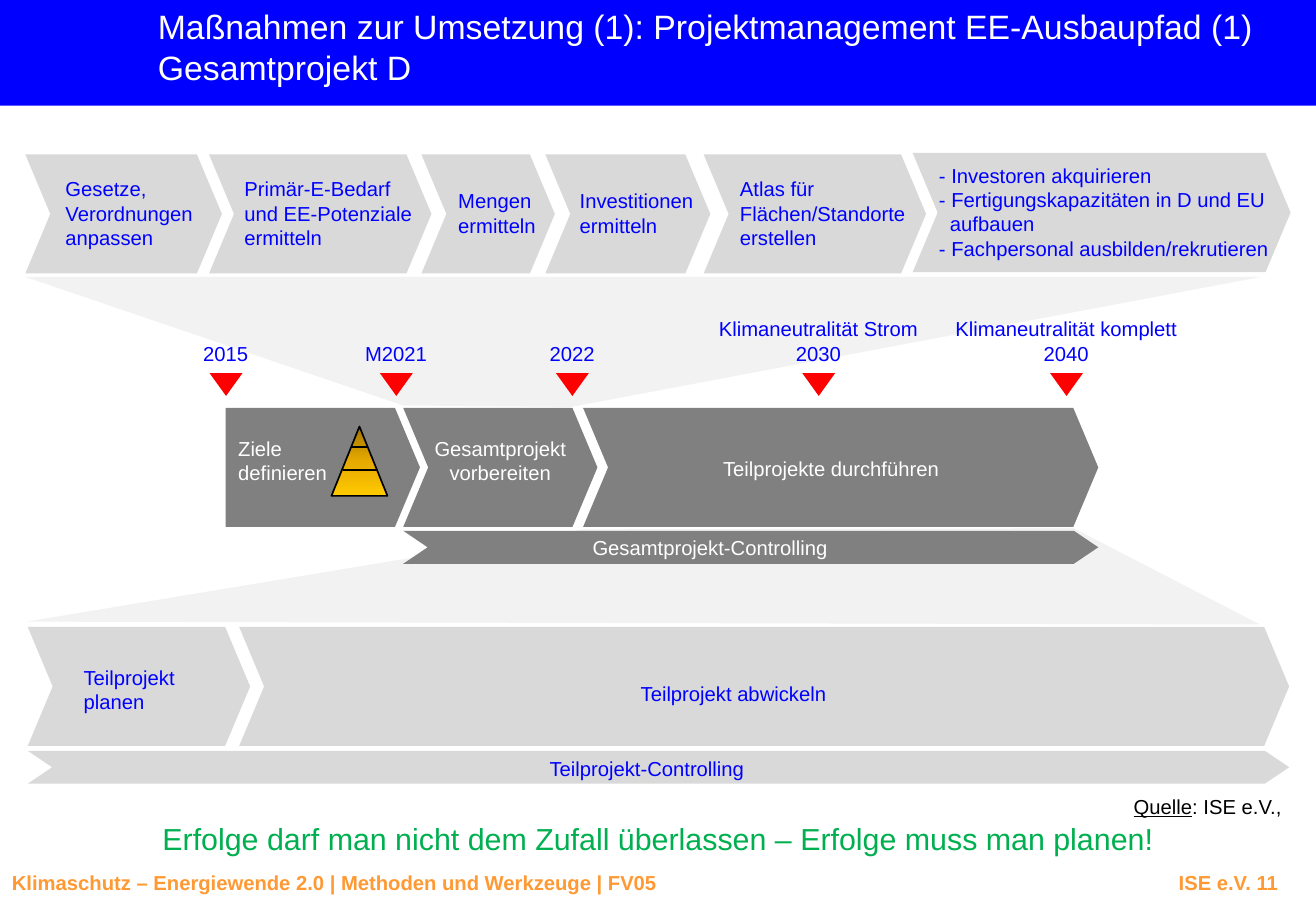
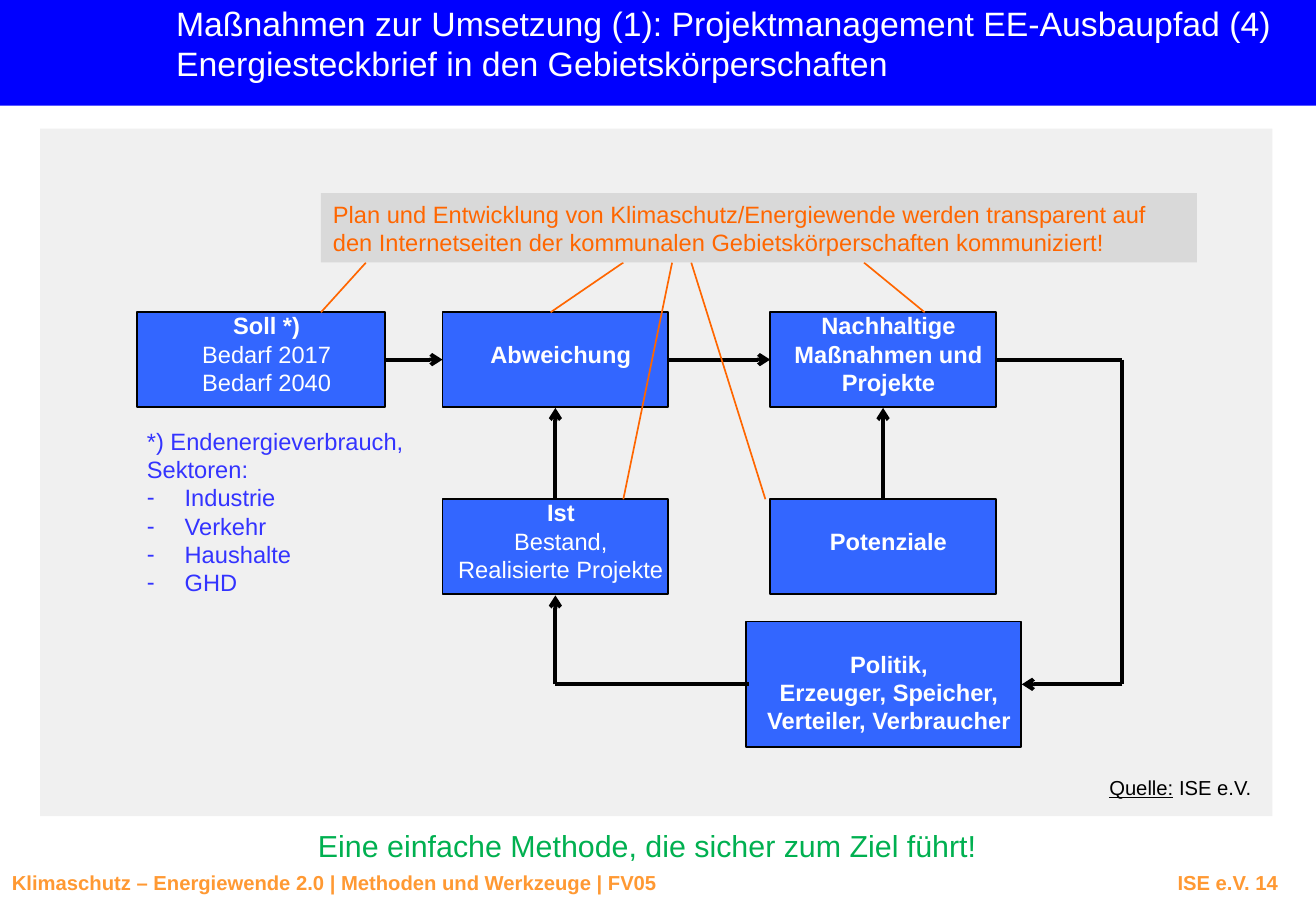
from copy import deepcopy
from itertools import pairwise

from lxml import etree
from pptx import Presentation
from pptx.dml.color import RGBColor
from pptx.enum import shapes, text
from pptx.oxml.ns import qn
from pptx.util import Cm, Pt

SHAPE = shapes.MSO_SHAPE
LEFT, CENTER, RIGHT = text.PP_ALIGN.LEFT, text.PP_ALIGN.CENTER, text.PP_ALIGN.RIGHT
TOP, MIDDLE, BOTTOM = text.MSO_ANCHOR.TOP, text.MSO_ANCHOR.MIDDLE, text.MSO_ANCHOR.BOTTOM

FONT = "Arial"
BLUE = RGBColor(0x00, 0x00, 0xFF)
BOX_BLUE = RGBColor(0x33, 0x66, 0xFF)
NOTE_BLUE = RGBColor(0x33, 0x33, 0xFF)
WHITE = RGBColor(0xFF, 0xFF, 0xFF)
BLACK = RGBColor(0x00, 0x00, 0x00)
RED = RGBColor(0xFF, 0x00, 0x00)
GREEN = RGBColor(0x00, 0xB0, 0x50)
ORANGE = RGBColor(0xFF, 0x66, 0x00)
FOOTER_ORANGE = RGBColor(0xFF, 0x99, 0x33)
DARK_GREY = RGBColor(0x80, 0x80, 0x80)
LIGHT_GREY = RGBColor(0xD9, 0xD9, 0xD9)
FUNNEL_GREY = RGBColor(0xF2, 0xF2, 0xF2)
PANEL_GREY = RGBColor(0xF0, 0xF0, 0xF0)
CONE = [RGBColor(0xA0, 0x74, 0x00), RGBColor(0xE6, 0xA9, 0x00), RGBColor(0xFF, 0xCA, 0x00)]

WIDTH, HEIGHT = 27.51, 19.05
STEP_H, BAR_H = 2.49, 0.69
FOOTER_Y, FOOTER_W = 18.19, 26.47
FOOTER = "Klimaschutz – Energiewende 2.0 | Methoden und Werkzeuge | FV05"

FUNNELS = [
    [(0.56, 13), (26.34, 13.06), (22.45, 11.05), (12.19, 11.07)],
    [(0.53, 5.79), (26.37, 5.79), (11.94, 8.51), (8.43, 8.48)],
]
PREPARATION = [
    (0.53, 4.11, 0.84, ["Gesetze,", "Verordnungen", "anpassen"]),
    (4.37, 4.65, 0.74, ["Primär-E-Bedarf", "und EE-Potenziale", "ermitteln"]),
    (8.81, 2.79, 0.77, ["Mengen", "ermitteln"]),
    (11.4, 3.45, 0.72, ["Investitionen", "ermitteln"]),
    (14.71, 4.65, 0.76, ["Atlas für", "Flächen/Standorte", "erstellen"]),
    (19.08, 7.9, 0.55, ["- Investoren akquirieren",
                        "- Fertigungskapazitäten in D und EU aufbauen",
                        "- Fachpersonal ausbilden/rekrutieren"]),
]
STEPS = [(x, 3.2 if x > 19 else 3.23, w, STEP_H, LIGHT_GREY, LEFT, dx, -0.02, lines)
         for x, w, dx, lines in PREPARATION] + [
    (4.72, 8.53, 4.06, STEP_H, DARK_GREY, LEFT, 0.26, -0.15, ["Ziele", "definieren"]),
    (8.43, 8.53, 4.06, STEP_H, DARK_GREY, CENTER, 0, -0.15, ["Gesamtprojekt", "vorbereiten"]),
    (12.19, 8.53, 10.77, STEP_H, DARK_GREY, CENTER, -0.2, 0.02, ["Teilprojekte durchführen"]),
    (8.43, 11.1, 14.53, BAR_H, DARK_GREY, CENTER, -0.85, 0.01, ["Gesamtprojekt-Controlling"]),
    (0.58, 13.11, 4.65, STEP_H, LIGHT_GREY, LEFT, 1.17, 0.06, ["Teilprojekt", "planen"]),
    (5, 13.11, 21.95, STEP_H, LIGHT_GREY, CENTER, -0.64, 0.15, ["Teilprojekt abwickeln"]),
    (0.58, 15.7, 26.37, BAR_H, LIGHT_GREY, CENTER, -0.24, 0.03, ["Teilprojekt-Controlling"]),
]
MILESTONES = [
    (4.72, ["2015"]),
    (8.28, ["M2021"]),
    (11.96, ["2022"]),
    (17.11, ["Klimaneutralität Strom", "2030"]),
    (22.29, ["Klimaneutralität komplett", "2040"]),
]
CONE_LINES = [(7.34, 7.7, 9.35), (7.16, 7.9, 9.83)]

BOXES = [
    (2.87, 6.53, 5.18, 1.98, 0, [[("Soll *)", "bold")], "Bedarf 2017", "Bedarf 2040"]),
    (9.25, 6.53, 4.72, 1.98, 0, [[("Abweichung", "bold")]]),
    (16.1, 6.53, 4.72, 1.98, 0, [[("Nachhaltige", "bold")], [("Maßnahmen und", "bold")],
                                 [("Projekte", "bold")]]),
    (9.25, 10.44, 4.72, 1.98, 0, [[("Ist", "bold")], "Bestand,", "Realisierte Projekte"]),
    (16.1, 10.44, 4.72, 1.98, 0, [[("Potenziale", "bold")]]),
    (15.6, 13, 5.74, 2.62, 0.57, [[("Politik,", "bold")], [("Erzeuger, Speicher,", "bold")],
                                  [("Verteiler, Verbraucher", "bold")]]),
]
ARROWS = [
    [(8.05, 7.52), (9.25, 7.52)],
    [(13.99, 7.52), (16.1, 7.52)],
    [(11.61, 10.44), (11.61, 8.53)],
    [(18.46, 10.44), (18.46, 8.53)],
    [(20.82, 7.52), (23.46, 7.52), (23.46, 14.31), (21.36, 14.31)],
    [(15.65, 14.31), (11.61, 14.31), (11.61, 12.45)],
]
CALLOUT = ("Plan und Entwicklung von Klimaschutz/Energiewende werden transparent auf "
           "den Internetseiten der kommunalen Gebietskörperschaften kommuniziert!")
POINTERS = [
    [(6.71, 6.53), (7.65, 5.49)],
    [(11.51, 6.53), (13.03, 5.49)],
    [(13.03, 10.44), (14.05, 5.49)],
    [(19.33, 6.53), (18.06, 5.49)],
    [(16, 10.44), (14.45, 5.49)],
]
NOTE = ["*) Endenergieverbrauch,", "Sektoren:"]
SECTORS = ["Industrie", "Verkehr", "Haushalte", "GHD"]


def write(tf, lines, size, color, align=LEFT, anchor=TOP, margin=0):
    tf.word_wrap = True
    tf.auto_size = text.MSO_AUTO_SIZE.NONE
    tf.vertical_anchor = anchor
    tf.margin_left = tf.margin_right = Cm(margin)
    tf.margin_top = tf.margin_bottom = 0
    for i, line in enumerate(lines):
        p = tf.add_paragraph() if i else tf.paragraphs[0]
        p.alignment = align
        p.space_before = Pt(0)
        for words, style in [(line, None)] if isinstance(line, str) else line:
            r = p.add_run()
            r.text = words
            r.font.name, r.font.size = FONT, Pt(size)
            r.font.color.rgb = color
            if style:
                setattr(r.font, style, True)
    return tf


def indent(p, left, first=0):
    pPr = p._p.get_or_add_pPr()
    pPr.set("marL", str(Cm(left)))
    pPr.set("indent", str(Cm(first)))
    return pPr


def label(s, x, y, w, h, lines, size, color, align=LEFT, anchor=TOP):
    sp = s.shapes.add_textbox(Cm(x), Cm(y), Cm(w), Cm(h))
    write(sp.text_frame, lines, size, color, align, anchor)
    return sp


def paint(sp, fill, line=None):
    sp.shadow.inherit = False
    if fill is not None:
        sp.fill.solid()
        sp.fill.fore_color.rgb = fill
    if line is None:
        sp.line.fill.background()
    else:
        sp.line.color.rgb = line
        sp.line.width = Pt(1)
    return sp


def block(s, kind, x, y, w, h, fill, line=None):
    return paint(s.shapes.add_shape(kind, Cm(x), Cm(y), Cm(w), Cm(h)), fill, line)


def connect(s, start, end, color, width, arrow=False):
    cn = s.shapes.add_connector(shapes.MSO_CONNECTOR.STRAIGHT, *map(Cm, start + end))
    cn.line.color.rgb = color
    cn.line.width = Pt(width)
    if arrow:
        etree.SubElement(cn.line._get_or_add_ln(), qn("a:tailEnd")).set("type", "arrow")
    etree.SubElement(cn._element.spPr, qn("a:effectLst"))


def build_master(prs, s):
    band = block(s, SHAPE.RECTANGLE, 0, 0, WIDTH, 2.21, BLUE)
    footer = label(s, 0.25, FOOTER_Y, 18, 0.6, [[(FOOTER, "bold")]], 12, FOOTER_ORANGE)
    for i, sp in enumerate([band, footer]):
        sp._element.xpath(".//p:cNvPr")[0].set("id", str(50 + i))
        prs.slide_master.shapes.element.insert(2 + i, sp._element)


def frame(s, x, y, title, page, closing, closing_mid, closing_y, source, source_x, source_y):
    sp = s.shapes.title
    sp.left, sp.top, sp.width, sp.height = Cm(x), Cm(y), Cm(WIDTH - x), Cm(1.7)
    write(sp.text_frame, title, 20, WHITE)
    label(s, 0.25, FOOTER_Y, FOOTER_W, 0.6, [[("ISE e.V. " + page, "bold")]], 12,
          FOOTER_ORANGE, RIGHT)
    label(s, closing_mid - 13, closing_y, 26, 0.8, [closing], 18, GREEN, CENTER)
    label(s, source_x, source_y, 3.5, 0.5, [source], 12, BLACK)


def draw_funnel(s, points):
    fb = s.shapes.build_freeform(Cm(points[0][0]), Cm(points[0][1]))
    fb.add_line_segments([(Cm(x), Cm(y)) for x, y in points[1:]], close=True)
    paint(fb.convert_to_shape(), FUNNEL_GREY)


def draw_step(s, x, y, w, h, fill, align, dx, dy, lines):
    kind = SHAPE.PENTAGON if lines[0] == "Ziele" else SHAPE.CHEVRON
    sp = block(s, kind, x, y, w, h, fill)
    sp.adjustments[0] = 0.74 if h == BAR_H else 0.21
    color = WHITE if fill == DARK_GREY else BLUE
    text_w = w - dx if align == LEFT else w
    tf = label(s, x + dx, y + dy, text_w, h, lines, 12, color, align, MIDDLE).text_frame
    for p in tf.paragraphs:
        if p.text.startswith("- "):
            indent(p, 0.23, -0.23)


def draw_cone(s):
    sp = block(s, SHAPE.ISOSCELES_TRIANGLE, 6.93, 8.92, 1.17, 1.45, None, BLACK)
    sp.fill.gradient()
    sp.fill.gradient_angle = 270
    stops = sp._element.spPr.find(".//" + qn("a:gsLst"))
    stops.insert(1, deepcopy(stops[0]))
    stops[1].set("pos", "50000")
    for stop, color in zip(sp.fill.gradient_stops, CONE):
        stop.color.rgb = color
    for x1, x2, y in CONE_LINES:
        connect(s, (x1, y), (x2, y), BLACK, 1)


def build_roadmap(s):
    for points in FUNNELS:
        draw_funnel(s, points)
    for step in STEPS:
        draw_step(s, *step)
    draw_cone(s)
    for x, lines in MILESTONES:
        label(s, x - 2.5, 6.64, 5, 1, lines, 12, BLUE, CENTER, BOTTOM)
        block(s, SHAPE.ISOSCELES_TRIANGLE, x - 0.34, 7.8, 0.69, 0.48, RED).rotation = 180
    frame(s, 3.3, 0.13,
          ["Maßnahmen zur Umsetzung (1): Projektmanagement EE-Ausbaupfad (1)", "Gesamtprojekt D"],
          "11", "Erfolge darf man nicht dem Zufall überlassen – Erfolge muss man planen!",
          WIDTH / 2, 17.15, [("Quelle", "underline"), (": ISE e.V.,", None)], 23.7, 16.61)


def draw_note(s):
    body = s.placeholders[1]
    s.shapes.element.append(body._element)
    body.left, body.top, body.width, body.height = Cm(3.07), Cm(8.92), Cm(6), Cm(3.6)
    tf = write(body.text_frame, NOTE + SECTORS, 14, NOTE_BLUE)
    for i, p in enumerate(tf.paragraphs):
        if i < len(NOTE):
            etree.SubElement(indent(p, 0), qn("a:buNone"))
        else:
            etree.SubElement(indent(p, 0.79, -0.79), qn("a:buChar")).set("char", "-")


def build_profile(s):
    block(s, SHAPE.RECTANGLE, 0.84, 2.69, 25.76, 14.38, PANEL_GREY)
    for x, y, w, h, top, lines in BOXES:
        sp = block(s, SHAPE.RECTANGLE, x, y, w, h, BOX_BLUE, BLACK)
        tf = write(sp.text_frame, lines, 14, WHITE, CENTER, MIDDLE)
        tf.margin_left, tf.margin_top, tf.margin_bottom = Cm(0.23), Cm(top), Cm(0.25)
    for points in ARROWS:
        for start, end in pairwise(points):
            connect(s, start, end, BLACK, 2.25, end == points[-1])
    for start, end in POINTERS:
        connect(s, start, end, ORANGE, 1)
    sp = block(s, SHAPE.RECTANGLE, 6.71, 4.04, 18.31, 1.45, LIGHT_GREY)
    write(sp.text_frame, [CALLOUT], 14, ORANGE, LEFT, MIDDLE, 0.25)
    draw_note(s)
    frame(s, 3.68, 0.05,
          ["Maßnahmen zur Umsetzung (1): Projektmanagement EE-Ausbaupfad (4)",
           "Energiesteckbrief in den Gebietskörperschaften"],
          "14", "Eine einfache Methode, die sicher zum Ziel führt!",
          13.53, 17.3, [("Quelle:", "underline"), (" ISE e.V.", None)], 23.19, 16.21)


def main():
    prs = Presentation()
    prs.slide_width, prs.slide_height = Cm(WIDTH), Cm(HEIGHT)
    roadmap = prs.slides.add_slide(prs.slide_layouts[5])
    build_master(prs, roadmap)
    build_roadmap(roadmap)
    build_profile(prs.slides.add_slide(prs.slide_layouts[1]))
    prs.save("out.pptx")


if __name__ == "__main__":
    main()
